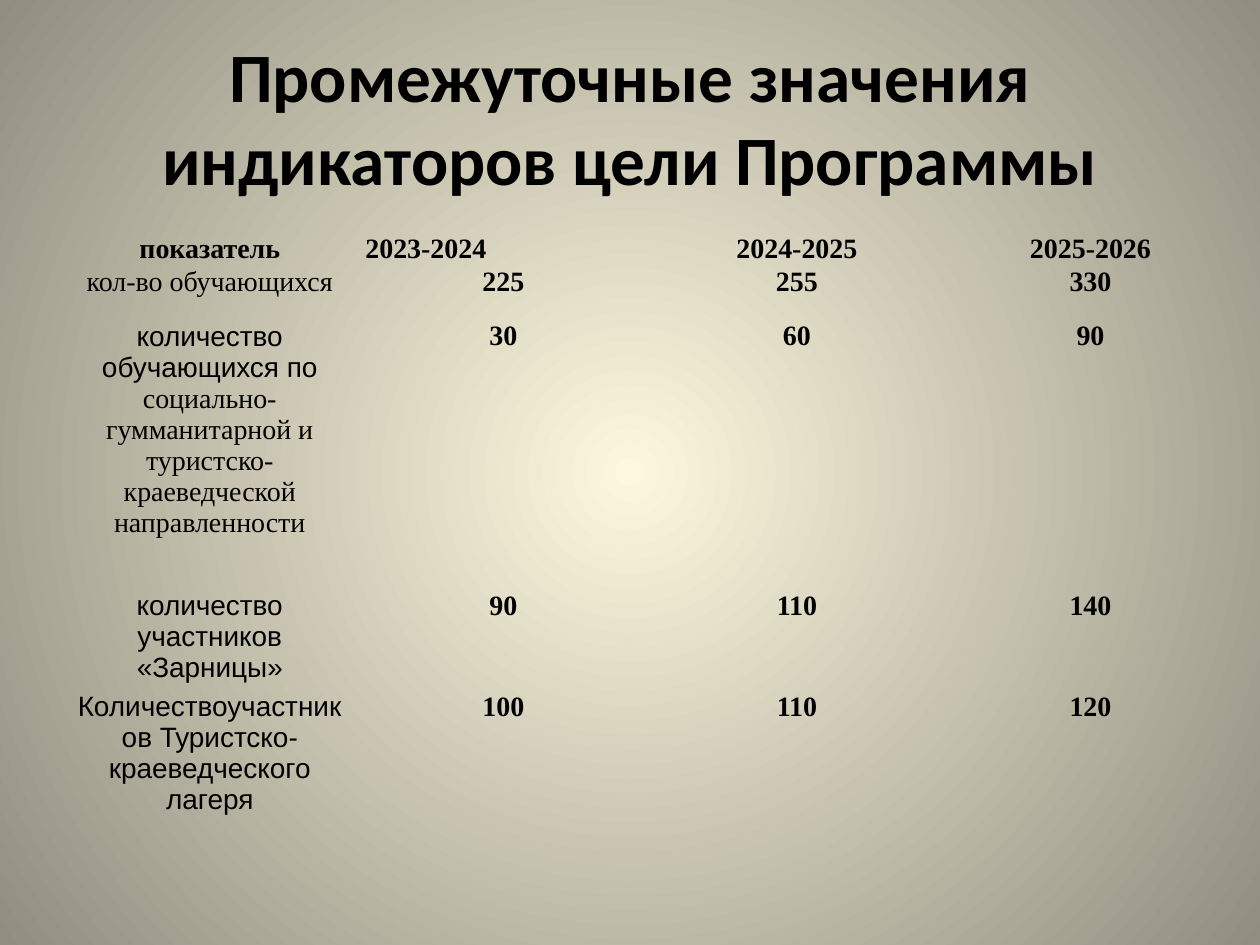
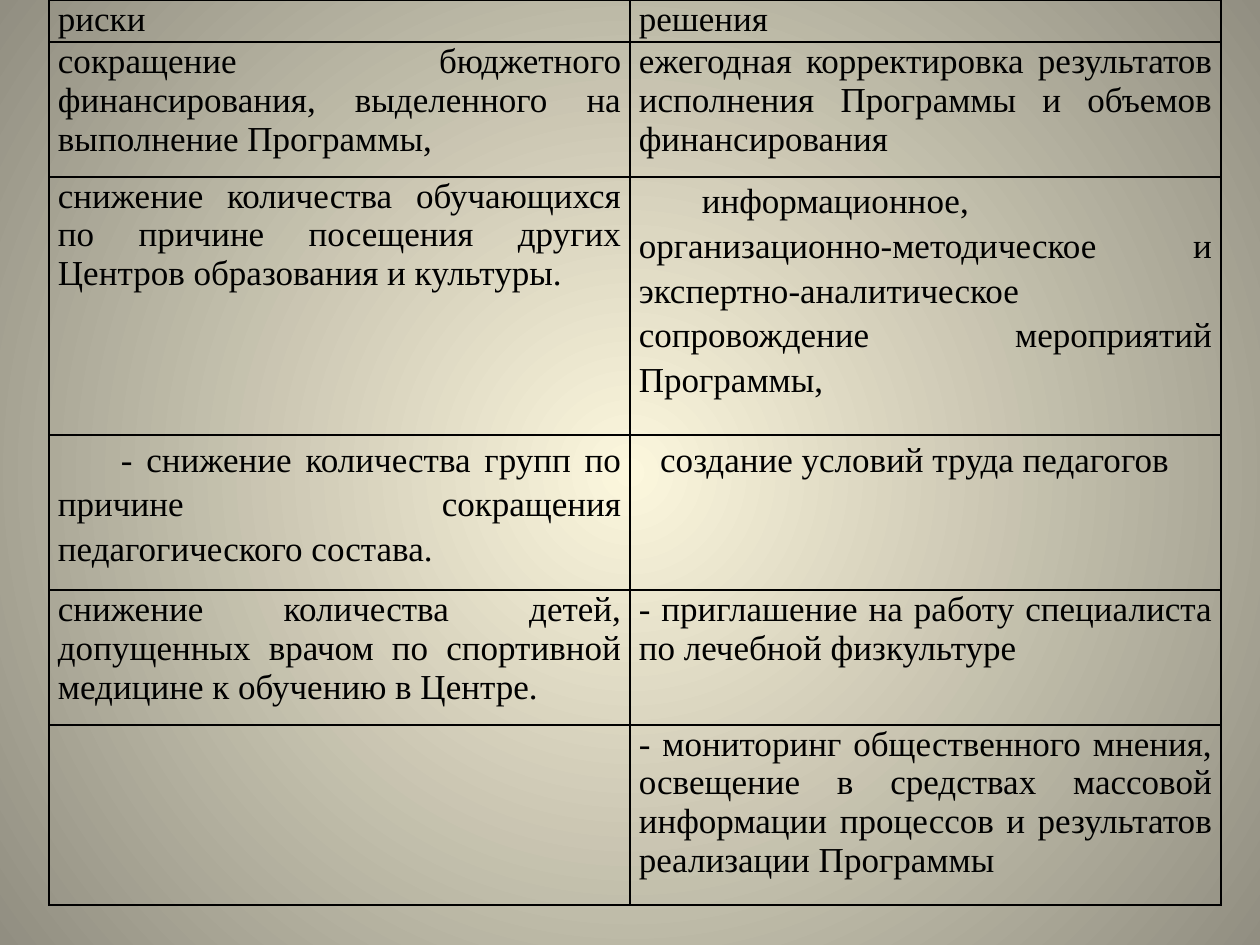
import pptx
import pptx.dml.color
import pptx.enum.text
import pptx.oxml
import pptx.oxml.ns
import pptx.util
from pptx.util import Inches

COLORS = {"text": "000000", "border": "000000", "center": "FCF7DD", "edge": "918E81"}
TITLE_FONT, SERIF, SANS = "Calibri", "Times New Roman", "Arial"
NO_STYLE = "{2D5ABB26-0587-4C30-8999-92F81FD0307C}"
ALIGN = pptx.enum.text.PP_ALIGN
qn = pptx.oxml.ns.qn
NS = pptx.oxml.ns.nsdecls("a")

# Indicators: label runs as (text, font), then one value per school year
YEARS = ["2023-2024", "2024-2025", "2025-2026"]
INDICATORS = [
    ([("кол-во обучающихся", SERIF)], ["225", "255", "330"]),
    ([("количество обучающихся по ", SANS),
      ("социально-гумманитарной и туристско- краеведческой направленности", SERIF)],
     ["30", "60", "90"]),
    ([("количество участников «Зарницы»", SANS)], ["90", "110", "140"]),
    ([("Количествоучастников Туристско- краеведческого лагеря", SANS)],
     ["100", "110", "120"]),
]
INDICATOR_HEIGHTS = [0.26, 0.43, 2.14, 0.74, 1.28]

# Risks and solutions: (text, first-line indent) per cell
RISKS = [
    (("риски", 0), ("решения", 0)),
    (("сокращение бюджетного финансирования, выделенного на выполнение Программы,", 0),
     ("ежегодная корректировка результатов исполнения Программы и объемов "
      "финансирования", 0)),
    (("снижение количества обучающихся по причине посещения других Центров "
      "образования и культуры.", 0),
     ("информационное, организационно-методическое и экспертно-аналитическое "
      "сопровождение мероприятий Программы,", 0.5)),
    (("- снижение количества групп по причине сокращения педагогического состава.", 0.5),
     ("создание условий труда педагогов", 0.17)),
    (("снижение количества детей, допущенных врачом по спортивной медицине к "
      "обучению в Центре.", 0),
     ("- приглашение на работу специалиста по лечебной физкультуре", 0)),
    (("", 0),
     ("- мониторинг общественного мнения, освещение в средствах массовой информации "
      "процессов и результатов реализации Программы", 0)),
]
RISK_HEIGHTS = [0.33, 1.07, 2.05, 1.23, 1.07, 1.43]


def rgb(name):
    return pptx.dml.color.RGBColor.from_string(COLORS[name])


def style_font(font, size, name, bold=False):
    font.size = pptx.util.Pt(size)
    font.name = name
    font.bold = bold
    font.color.rgb = rgb("text")


def add_slide(prs):
    """Blank slide with the shared radial background."""
    slide = prs.slides.add_slide(prs.slide_layouts[6])
    fill = slide.background.fill
    fill.gradient()
    for stop, name, position in zip(fill.gradient_stops, ("center", "edge"), (0, 1)):
        stop.color.rgb = rgb(name)
        stop.position = position
    grad = slide.background._cSld.find(".//" + qn("a:gradFill"))
    radial = pptx.oxml.parse_xml(
        f'<a:path {NS} path="circle">'
        '<a:fillToRect l="50000" t="50000" r="50000" b="50000"/></a:path>')
    grad.replace(grad.find(qn("a:lin")), radial)
    return slide


def add_title(slide, text):
    tf = slide.shapes.add_textbox(
        Inches(0.5), Inches(0.3), Inches(9), Inches(1.25)).text_frame
    tf.word_wrap = True
    tf.vertical_anchor = pptx.enum.text.MSO_ANCHOR.MIDDLE
    p = tf.paragraphs[0]
    p.text = text
    p.alignment = ALIGN.CENTER
    style_font(p.font, 39.6, TITLE_FONT, bold=True)


def add_table(slide, left, top, widths, heights):
    """Unfilled table without grid lines and with tight cell margins."""
    frame = slide.shapes.add_table(
        len(heights), len(widths), Inches(left), Inches(top),
        Inches(sum(widths)), Inches(sum(heights)))
    table = frame.table
    table.first_row = table.horz_banding = False
    table._tbl.tblPr.find(qn("a:tableStyleId")).text = NO_STYLE
    for column, width in zip(table.columns, widths):
        column.width = Inches(width)
    for row, height in zip(table.rows, heights):
        row.height = Inches(height)
    for cell in table.iter_cells():
        cell.margin_left = cell.margin_right = Inches(0.07)
        cell.margin_top = cell.margin_bottom = 0
        cell.fill.background()
    return table


def set_borders(cell):
    tcPr = cell._tc.get_or_add_tcPr()
    for i, side in enumerate(("lnL", "lnR", "lnT", "lnB")):
        tcPr.insert(i, pptx.oxml.parse_xml(
            f'<a:{side} {NS} w="12700"><a:solidFill>'
            f'<a:srgbClr val="{COLORS["border"]}"/></a:solidFill></a:{side}>'))


def write_cell(cell, runs, size, alignment, bold=False, indent=0):
    p = cell.text_frame.paragraphs[0]
    p.alignment = alignment
    style_font(p.font, size, SERIF, bold)
    if indent:
        p.line_spacing = 1.15
        p._p.get_or_add_pPr().set("indent", str(Inches(indent)))
    for text, font_name in runs:
        r = p.add_run()
        r.text = text
        style_font(r.font, size, font_name, bold)


def indicators_slide(prs):
    slide = add_slide(prs)
    add_title(slide, "Промежуточные значения индикаторов цели Программы")
    table = add_table(slide, 0.5, 1.85, [2.33] * 4, INDICATOR_HEIGHTS)
    # Header row
    for col, text in enumerate(["показатель"] + YEARS):
        alignment = ALIGN.LEFT if col == 1 else ALIGN.CENTER
        write_cell(table.cell(0, col), [(text, SERIF)], 16, alignment, bold=True)
    # Labels and values
    for row, (label, values) in enumerate(INDICATORS, start=1):
        write_cell(table.cell(row, 0), label, 16, ALIGN.CENTER)
        for col, value in enumerate(values, start=1):
            write_cell(table.cell(row, col), [(value, SERIF)], 16, ALIGN.CENTER, bold=True)


def risks_slide(prs):
    slide = add_slide(prs)
    table = add_table(slide, 0.39, 0, [4.61, 4.69], RISK_HEIGHTS)
    for row, pair in enumerate(RISKS):
        for col, (text, indent) in enumerate(pair):
            cell = table.cell(row, col)
            set_borders(cell)
            if text:
                write_cell(cell, [(text, SERIF)], 20, ALIGN.JUSTIFY, indent=indent)


def main():
    prs = pptx.Presentation()
    prs.slide_width, prs.slide_height = Inches(10), Inches(7.5)
    indicators_slide(prs)
    risks_slide(prs)
    prs.save("out.pptx")


if __name__ == "__main__":
    main()
